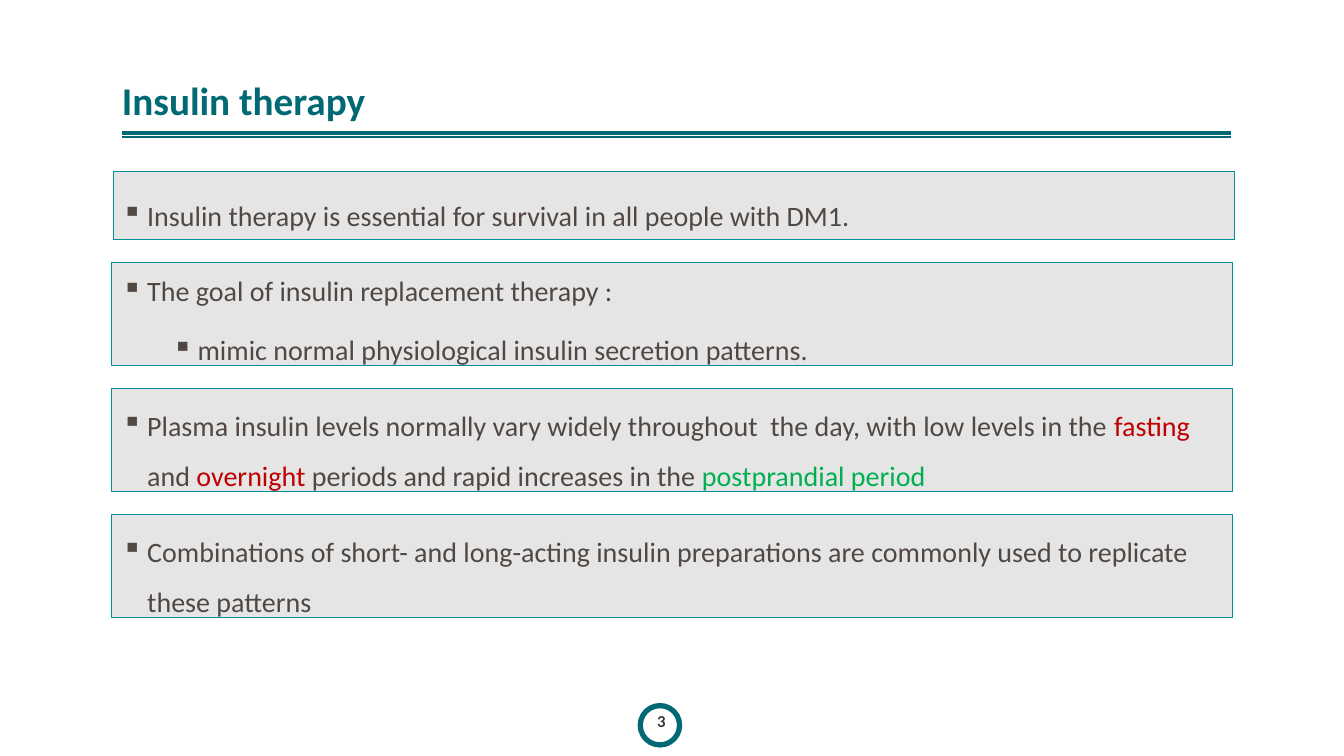
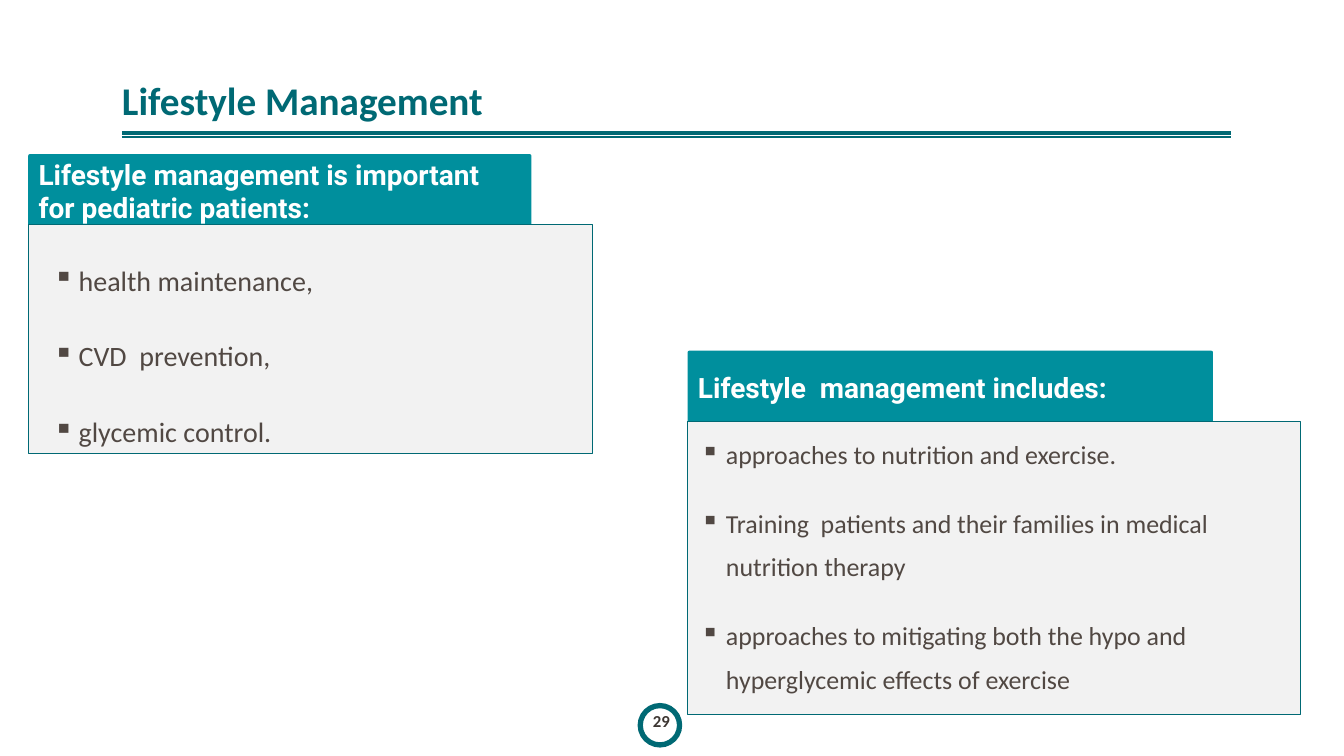
from lxml import etree
from pptx import Presentation
from pptx.dml.color import RGBColor
from pptx.enum import shapes, text
from pptx.oxml import ns
from pptx.util import Inches, Pt

DARK_TEAL = RGBColor(0x00, 0x69, 0x74)
TEAL = RGBColor(0x00, 0x8F, 0x9D)
GREY = RGBColor(0xE5, 0xE5, 0xE5)
PALE_GREY = RGBColor(0xF2, 0xF2, 0xF2)
WHITE = RGBColor(0xFF, 0xFF, 0xFF)
BODY = RGBColor(0x51, 0x48, 0x43)
NUMBER = RGBColor(0x3D, 0x36, 0x32)
RED = RGBColor(0xC0, 0x00, 0x00)
GREEN = RGBColor(0x00, 0xB0, 0x50)

presentation = Presentation()
presentation.slide_width, presentation.slide_height = Inches(13.33), Inches(7.5)


def add_box(slide, kind, at, fill=None, line=None, width=0.75):
    """Add a shape, or a text box when kind is None."""
    place = [Inches(length) for length in at]
    if kind is None:
        return slide.shapes.add_textbox(*place)
    shape = slide.shapes.add_shape(kind, *place)
    shape.shadow.inherit = False
    if fill is None:
        shape.fill.background()
    else:
        shape.fill.solid()
        shape.fill.fore_color.rgb = fill
    if line is None:
        shape.line.fill.background()
    else:
        shape.line.color.rgb = line
        shape.line.width = Pt(width)
    return shape


def write(shape, paragraphs, size, color, font="Calibri", bold=False, inset=0,
          anchor=text.MSO_ANCHOR.TOP, align=text.PP_ALIGN.LEFT, spacing=1.0):
    """Fill a shape; a paragraph is (runs, indent, space before), a run (text, colour)."""
    frame = shape.text_frame
    frame.word_wrap = True
    frame.vertical_anchor = anchor
    frame.margin_left = frame.margin_right = Inches(inset)
    for index, (runs, indent, before) in enumerate(paragraphs):
        paragraph = frame.add_paragraph() if index else frame.paragraphs[0]
        paragraph.alignment = align
        paragraph.line_spacing = spacing
        paragraph.space_before = Pt(before)
        if indent:
            properties = paragraph._p.get_or_add_pPr()
            properties.set("marL", str(Inches(indent)))
            properties.set("indent", str(Inches(-0.25)))
            etree.SubElement(properties, ns.qn("a:buChar")).set("char", "▪")
        paragraph.font.name = font
        paragraph.font.size = Pt(size)
        paragraph.font.bold = bold
        paragraph.font.color.rgb = color
        for words, accent in runs:
            run = paragraph.add_run()
            run.text = words
            if accent is not None:
                run.font.color.rgb = accent


# Shared frame: title, double rule, page number in a ring
slides = []
for title, number in (("Insulin therapy", "3"), ("Lifestyle Management", "29")):
    slide = presentation.slides.add_slide(presentation.slide_layouts[6])
    slides.append(slide)
    for y, width in ((1.32, 3), (1.36, 1)):
        rule = slide.shapes.add_connector(
            shapes.MSO_CONNECTOR.STRAIGHT, Inches(1.21), Inches(y), Inches(12.21), Inches(y))
        rule.line.color.rgb = DARK_TEAL
        rule.line.width = Pt(width)
        etree.SubElement(rule._element.spPr, ns.qn("a:effectLst"))
    write(add_box(slide, None, (1.21, 0.08, 10.92, 1.2)), [([(title, None)], 0, 0)],
          28, DARK_TEAL, bold=True, anchor=text.MSO_ANCHOR.BOTTOM, spacing=0.9)
    add_box(slide, shapes.MSO_SHAPE.OVAL, (6.35, 7, 0.39, 0.39), line=DARK_TEAL, width=3.78)
    write(add_box(slide, None, (6.32, 6.95, 0.48, 0.4)), [([(number, None)], 0, 0)],
          12, NUMBER, bold=True, anchor=text.MSO_ANCHOR.MIDDLE, align=text.PP_ALIGN.CENTER)

therapy, lifestyle = slides

# Insulin therapy: four panels behind one list
panels = [(1.13, 1.7, 11.11, 0.68)]
panels += [(1.11, 2.6 + 1.25 * row, 11.11, 1.03) for row in range(3)]
for panel in panels:
    add_box(therapy, shapes.MSO_SHAPE.RECTANGLE, panel, GREY, TEAL)

points = [
    ([("Insulin therapy is essential for survival in all people with DM1.", None)], 0.25, 18),
    ([("The goal of insulin replacement therapy :", None)], 0.25, 18),
    ([("mimic normal physiological insulin secretion patterns.", None)], 0.75, 6),
    ([("Plasma insulin levels normally vary widely throughout  the day, "
       "with low levels in the ", None),
      ("fasting ", RED), ("and ", None), ("overnight ", RED),
      ("periods and rapid increases in the ", None),
      ("postprandial period", GREEN)], 0.25, 18),
    ([("Combinations of short- and long-acting insulin preparations are commonly used "
       "to replicate these patterns", None)], 0.25, 18),
]
write(add_box(therapy, None, (1.21, 1.75, 10.92, 5)), points, 20, BODY, spacing=1.5)

# Lifestyle management: two cards, each a heading tab on a list
cards = [
    # left, top, tab width, list width, list height, size, line spacing, indent, space before
    (0.28, 1.53, 4.99, 5.6, 2.27, 20, 2.0, 0.5, 6,
     "Lifestyle management is important for pediatric patients:",
     ["health maintenance,", "CVD  prevention,", "glycemic control."]),
    (6.82, 3.48, 5.21, 6.08, 2.91, 18.5, 1.4, 0.38, 18,
     "Lifestyle  management includes:",
     ["approaches to nutrition and exercise.",
      "Training  patients and their families in medical nutrition therapy",
      "approaches to mitigating both the hypo and hyperglycemic effects of exercise"]),
]
for left, top, tab_width, width, height, size, spacing, indent, before, heading, items in cards:
    tab = add_box(lifestyle, shapes.MSO_SHAPE.ROUNDED_RECTANGLE,
                  (left, top, tab_width, 0.73), TEAL)
    tab.adjustments[0] = 0.02
    write(tab, [([(heading, None)], 0, 0)], 20, WHITE, font="Roboto", bold=True,
          inset=0.1, anchor=text.MSO_ANCHOR.MIDDLE)
    card = add_box(lifestyle, shapes.MSO_SHAPE.RECTANGLE,
                   (left, top + 0.7, width, height), PALE_GREY, DARK_TEAL)
    write(card, [([(item, None)], indent, before) for item in items], size, BODY,
          spacing=spacing)

presentation.save("out.pptx")
